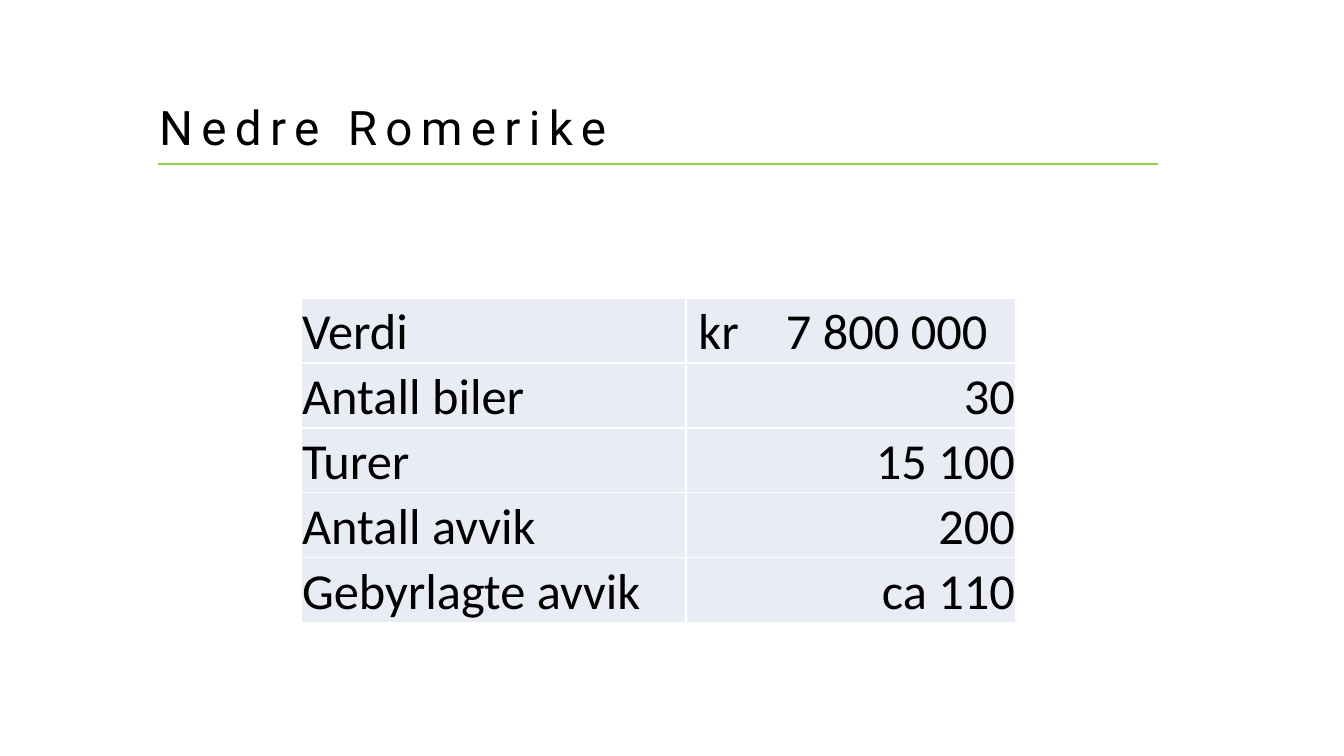
from lxml.etree import SubElement
from pptx import Presentation
from pptx.dml.color import RGBColor
from pptx.enum.shapes import MSO_CONNECTOR
from pptx.enum.text import MSO_ANCHOR, MSO_AUTO_SIZE, PP_ALIGN
from pptx.oxml.ns import qn
from pptx.util import Pt

PX = 12192000 / 1344
BLACK = RGBColor(0x00, 0x00, 0x00)
WHITE = RGBColor(0xFF, 0xFF, 0xFF)
GREEN = RGBColor(0x92, 0xD0, 0x50)
PALE_BLUE = RGBColor(0xE9, 0xEB, 0xF5)

FIGURES = [
    ("Verdi", " kr\t7 800 000"),
    ("Antall biler", "30"),
    ("Turer", "15 100"),
    ("Antall avvik", "200"),
    ("Gebyrlagte avvik", "ca 110"),
]


def px(length):
    return round(length * PX)


def style_font(font, name, size):
    font.name = name
    font.size = Pt(size)
    font.color.rgb = BLACK


def add_heading(page, text, left, top, width, height):
    title = page.shapes.title
    title.left, title.top, title.width, title.height = map(px, (left, top, width, height))
    frame = title.text_frame
    frame.text = text
    frame.word_wrap = True
    frame.auto_size = MSO_AUTO_SIZE.NONE
    frame.vertical_anchor = MSO_ANCHOR.MIDDLE
    para = frame.paragraphs[0]
    para.alignment = PP_ALIGN.LEFT
    para.line_spacing = 0.9
    span = para.runs[0]
    style_font(span.font, "Roboto", 34)
    span.font.bold = False
    span.font._element.set("spc", "600")

    bottom = px(top + height + 1)
    rule = page.shapes.add_connector(
        MSO_CONNECTOR.STRAIGHT, px(left + 9), bottom, px(left + width + 1), bottom
    )
    rule.line.color.rgb = GREEN
    rule.line.width = Pt(1.5)
    SubElement(rule._element.spPr, qn("a:effectLst"))


def add_borders(cell):
    properties = cell._tc.get_or_add_tcPr()
    for side in ("a:lnL", "a:lnR", "a:lnT", "a:lnB"):
        border = SubElement(properties, qn(side), w=str(Pt(1)))
        fill = SubElement(border, qn("a:solidFill"))
        SubElement(fill, qn("a:srgbClr"), val=str(WHITE))


def fill_cell(cell, text, alignment):
    add_borders(cell)
    cell.fill.solid()
    cell.fill.fore_color.rgb = PALE_BLUE
    cell.margin_left = cell.margin_right = cell.margin_top = px(1)
    cell.margin_bottom = 0
    cell.vertical_anchor = MSO_ANCHOR.BOTTOM
    cell.text_frame.text = text
    para = cell.text_frame.paragraphs[0]
    para.alignment = alignment
    if "\t" in text:
        tabs = SubElement(para._p.get_or_add_pPr(), qn("a:tabLst"))
        SubElement(tabs, qn("a:tab"), pos=str(px(99)), algn="l")
    style_font(para.font, "Calibri", 36)
    style_font(para.runs[0].font, "Calibri", 36)


def add_figures(page, rows, left, top, column_widths, row_height):
    frame = page.shapes.add_table(
        len(rows), len(column_widths), px(left), px(top),
        px(sum(column_widths)), px(row_height * len(rows)),
    )
    table = frame.table
    table.first_row = False
    table.horz_banding = False
    for column, width in zip(table.columns, column_widths):
        column.width = px(width)
    for row, (label, value) in zip(table.rows, rows):
        row.height = px(row_height)
        fill_cell(row.cells[0], label, PP_ALIGN.LEFT)
        value_alignment = PP_ALIGN.LEFT if "\t" in value else PP_ALIGN.RIGHT
        fill_cell(row.cells[1], value, value_alignment)


def main():
    deck = Presentation()
    deck.slide_width = px(1344)
    deck.slide_height = px(756)
    page = deck.slides.add_slide(deck.slide_layouts[5])
    add_heading(page, "Nedre Romerike", 149, 98, 1008, 65)
    add_figures(page, FIGURES, 301, 298, (385, 330), 65)
    deck.save("out.pptx")


if __name__ == "__main__":
    main()
